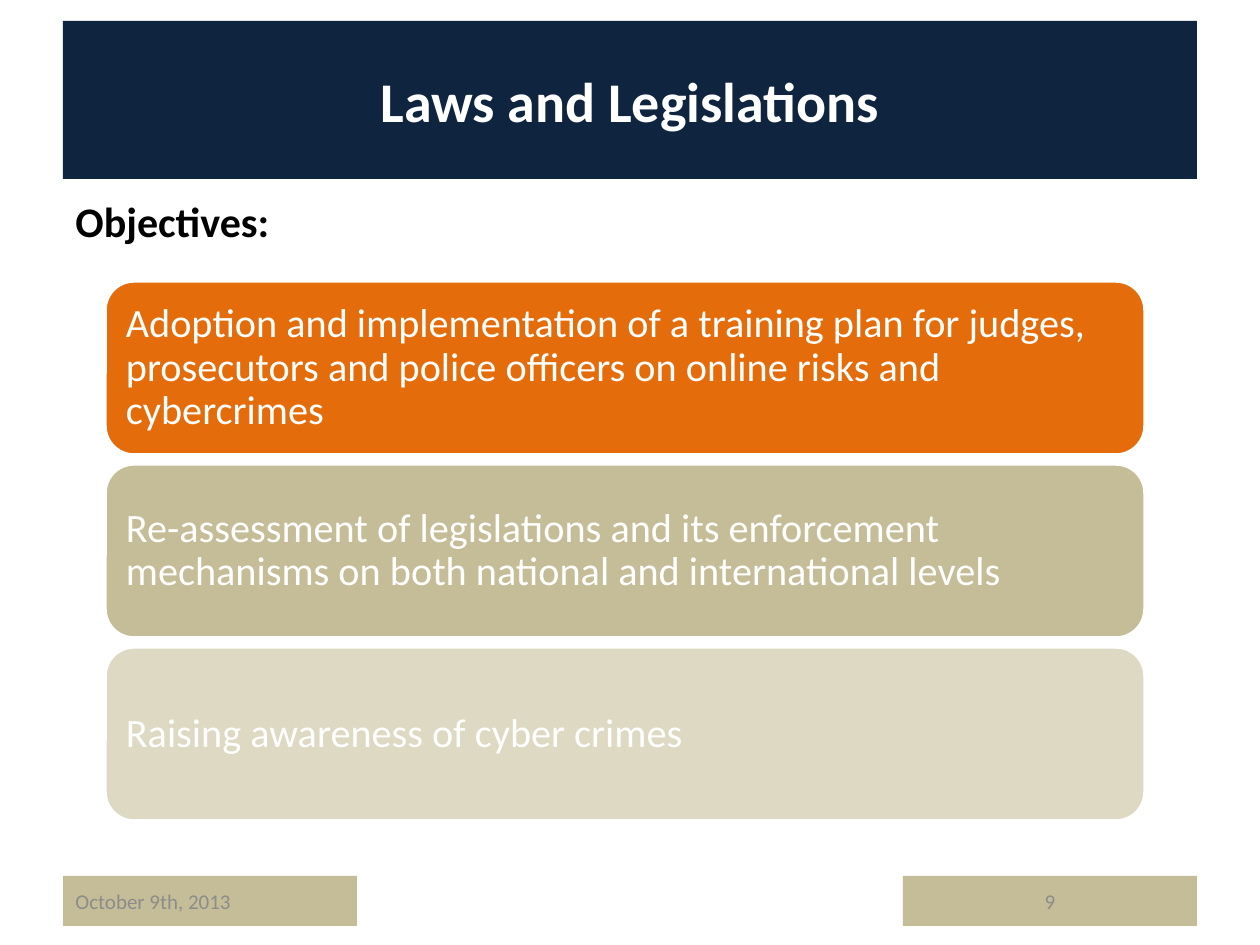
import pptx
import pptx.util
import pptx.dml.color
import pptx.enum.shapes
import pptx.enum.text

PX = 914400 / 126
COLORS = {
    "navy": "0F243E",
    "orange": "E46C0A",
    "tan": "C4BD97",
    "pale": "DDD9C3",
    "grey": "8C8C8C",
    "white": "FFFFFF",
    "black": "000000",
}
SHAPES = pptx.enum.shapes.MSO_SHAPE
ALIGN = pptx.enum.text.PP_ALIGN
ANCHOR = pptx.enum.text.MSO_ANCHOR


def rgb(name):
    return pptx.dml.color.RGBColor.from_string(COLORS[name])


def add_box(kind, bounds, fill, text, size, color, align=ALIGN.LEFT, bold=False):
    """Add a shape with one paragraph; a fill of None leaves it clear."""
    box = slide.shapes.add_shape(kind, *[round(length * PX) for length in bounds])
    box.shadow.inherit = False
    box.line.fill.background()
    if fill:
        box.fill.solid()
        box.fill.fore_color.rgb = rgb(fill)
    else:
        box.fill.background()
    frame = box.text_frame
    frame.word_wrap = True
    frame.vertical_anchor = ANCHOR.MIDDLE
    para = frame.paragraphs[0]
    para.text = text
    para.alignment = align
    para.font.name = "Calibri"
    para.font.size = pptx.util.Pt(size)
    para.font.bold = bold
    para.font.color.rgb = rgb(color)
    return box


deck = pptx.Presentation()
deck.slide_width = round(1260 * PX)
deck.slide_height = round(945 * PX)
slide = deck.slides.add_slide(deck.slide_layouts[6])

# Footer
add_box(SHAPES.RECTANGLE, (63, 876, 294, 50), "tan", "October 9th, 2013", 12, "grey")
add_box(SHAPES.RECTANGLE, (903, 876, 294, 50), "tan", "9", 12, "grey", ALIGN.CENTER)

# Objectives
objectives = [
    ("orange", "Adoption and implementation of a training plan for judges, "
               "prosecutors and police officers on online risks and cybercrimes"),
    ("tan", "Re-assessment of legislations and its enforcement mechanisms "
            "on both national and international levels"),
    ("pale", "Raising awareness of cyber crimes"),
]
for row, (fill, text) in enumerate(objectives):
    bounds = (105, 281 + row * 183, 1040, 174)
    card = add_box(SHAPES.ROUNDED_RECTANGLE, bounds, fill, text, 23, "white")
    card.line.color.rgb = rgb("white")
    card.line.width = pptx.util.Pt(2)
    card.text_frame.paragraphs[0].line_spacing = 0.9

# Headings
heading = add_box(SHAPES.RECTANGLE, (63, 189, 221, 63), None, "Objectives:", 24, "black", bold=True)
heading.text_frame.vertical_anchor = ANCHOR.TOP
add_box(SHAPES.RECTANGLE, (63, 21, 1134, 158), "navy", "Laws and Legislations", 32, "white",
        ALIGN.CENTER, bold=True)

deck.save("out.pptx")
